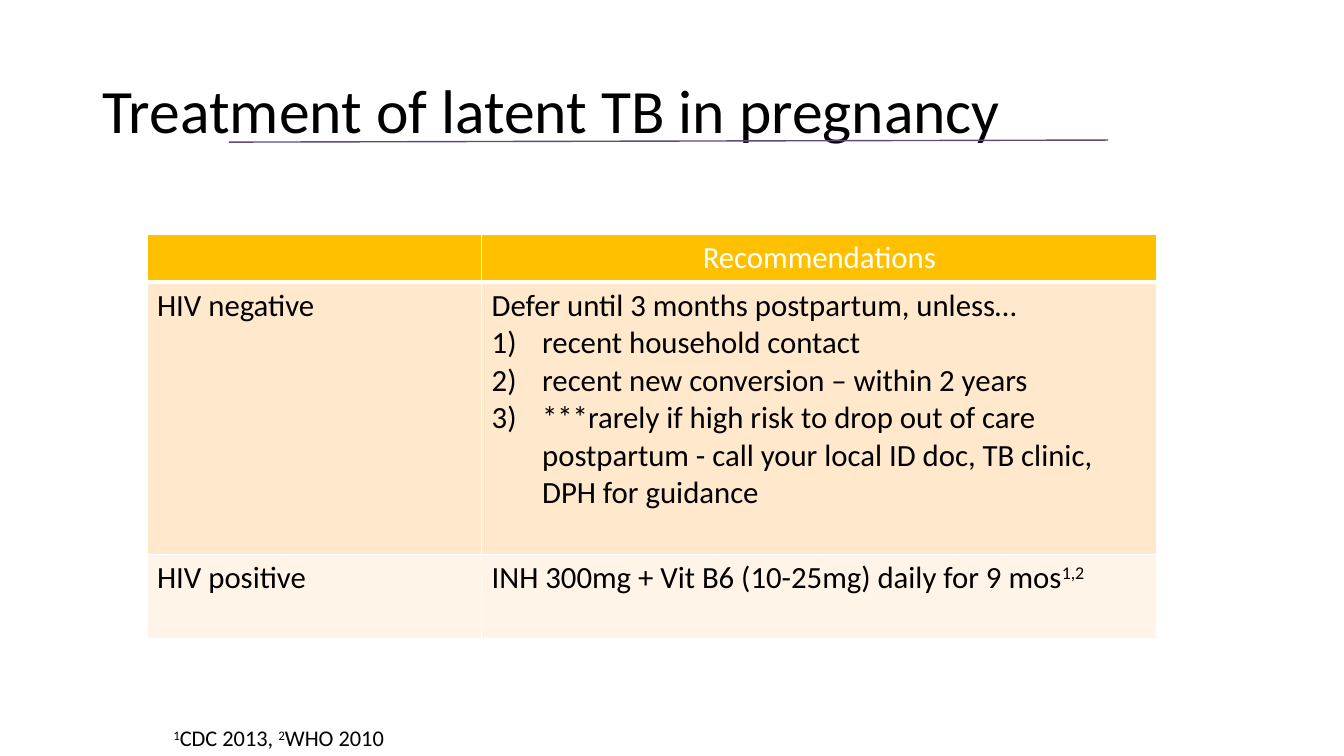
from pptx import Presentation
from pptx.dml.color import RGBColor
from pptx.enum.shapes import MSO_CONNECTOR
from pptx.enum.text import MSO_ANCHOR, MSO_AUTO_SIZE, PP_ALIGN
from pptx.oxml.ns import qn
from pptx.util import Inches, Pt
from lxml import etree

MIDDLE = MSO_ANCHOR.MIDDLE
NO_AUTOFIT = MSO_AUTO_SIZE.NONE
LEFT, CENTER = PP_ALIGN.LEFT, PP_ALIGN.CENTER
STRAIGHT = MSO_CONNECTOR.STRAIGHT
TITLE_ONLY = 5

BLACK, WHITE, PURPLE = "000000", "FFFFFF", "604A7B"
GOLD, PEACH, CREAM = "FFC000", "FFE8CC", "FFF4E7"

COLUMN_SHARES = [24.9, 50.25]
ROW_SHARES = [6.2, 36, 11.2]
ROW_FILLS = [GOLD, PEACH, CREAM]
# Each cell is a list of paragraphs, each paragraph a list of (text, raised) spans.
CELLS = [
    [[], [[("Recommendations", False)]]],
    [[[("HIV negative", False)]],
     [[("Defer until 3 months postpartum, unless…", False)],
      [("recent household contact", False)],
      [("recent new conversion – within 2 years", False)],
      [("***rarely if high risk to drop out of care postpartum - "
        "call your local ID doc, TB clinic, DPH for guidance", False)]]],
    [[[("HIV positive", False)]],
     [[("INH 300mg + Vit B6 (10-25mg) daily for 9 mos", False), ("1,2", True)]]],
]
SOURCES = [(" 1", True), ("CDC 2013, ", False), ("2", True), ("WHO 2010", False)]


def color(hex_code):
    return RGBColor.from_string(hex_code)


def number_paragraph(para):
    properties = para._p.get_or_add_pPr()
    properties.set("marL", str(Inches(0.5)))
    properties.set("indent", str(Inches(-0.5)))
    etree.SubElement(properties, qn("a:buAutoNum"), type="arabicParenR")


def border_cell(cell, bottom_width):
    properties = cell._tc.get_or_add_tcPr()
    for side, width in (("L", 1), ("R", 1), ("T", 1), ("B", bottom_width)):
        edge = etree.SubElement(properties, qn(f"a:ln{side}"), w=str(Pt(width)))
        fill = etree.SubElement(edge, qn("a:solidFill"))
        etree.SubElement(fill, qn("a:srgbClr"), val=WHITE)


class Slide:
    """Places styled elements by percentages of the slide's width and height."""

    font_name = "Calibri"

    def __init__(self, deck):
        self.width, self.height = deck.slide_width, deck.slide_height
        self.page = deck.slides.add_slide(deck.slide_layouts[TITLE_ONLY])

    def across(self, share):
        return round(self.width * share / 100)

    def down(self, share):
        return round(self.height * share / 100)

    def area(self, left, top, width, height):
        return self.across(left), self.down(top), self.across(width), self.down(height)

    def set_text(self, para, spans, size, ink=BLACK, align=LEFT):
        para.alignment = align
        para.font.name, para.font.size = self.font_name, Pt(size)
        para.font.bold = False
        para.font.color.rgb = color(ink)
        for text, raised in spans:
            span = para.add_run()
            span.text = text
            if raised:
                span._r.get_or_add_rPr().set("baseline", "30000")

    def title(self, text, *place):
        box = self.page.shapes.title
        box.left, box.top, box.width, box.height = self.area(*place)
        frame = box.text_frame
        frame.vertical_anchor, frame.auto_size = MIDDLE, NO_AUTOFIT
        para = frame.paragraphs[0]
        para.line_spacing = 0.9
        self.set_text(para, [(text, False)], 44)

    def footnote(self, spans, *place):
        frame = self.page.shapes.add_textbox(*self.area(*place)).text_frame
        frame.word_wrap, frame.vertical_anchor = True, MIDDLE
        frame.margin_left = frame.margin_right = 0
        frame.margin_top = frame.margin_bottom = 0
        self.set_text(frame.paragraphs[0], spans, 16)

    def rule(self, left, top, right, bottom):
        line = self.page.shapes.add_connector(
            STRAIGHT, self.across(left), self.down(top),
            self.across(right), self.down(bottom))
        line.line.color.rgb = color(PURPLE)
        line.line.width = Pt(1)
        etree.SubElement(line._element.spPr, qn("a:effectLst"))

    def table(self, left, top):
        place = self.area(left, top, sum(COLUMN_SHARES), sum(ROW_SHARES))
        table = self.page.shapes.add_table(
            len(ROW_SHARES), len(COLUMN_SHARES), *place).table
        for column, share in zip(table.columns, COLUMN_SHARES):
            column.width = self.across(share)
        for index, row in enumerate(table.rows):
            row.height = self.down(ROW_SHARES[index])
            for cell, paragraphs in zip(row.cells, CELLS[index]):
                self.fill_cell(cell, paragraphs, ROW_FILLS[index], index == 0)

    def fill_cell(self, cell, paragraphs, fill, is_header):
        border_cell(cell, 3 if is_header else 1)
        cell.fill.solid()
        cell.fill.fore_color.rgb = color(fill)
        ink, align = (WHITE, CENTER) if is_header else (BLACK, LEFT)
        frame = cell.text_frame
        for index, spans in enumerate(paragraphs):
            para = frame.add_paragraph() if index else frame.paragraphs[0]
            if index:
                number_paragraph(para)
            self.set_text(para, spans, 22, ink, align)


def main():
    deck = Presentation()
    deck.slide_width, deck.slide_height = Inches(13.33), Inches(7.5)
    slide = Slide(deck)
    slide.title("Treatment of latent TB in pregnancy", 6.9, 5.33, 86.25, 19.33)
    slide.table(10.94, 31)
    slide.footnote(SOURCES, 12.68, 95.33, 66.3, 4.53)
    slide.rule(17.03, 18.8, 82.45, 18.53)
    deck.save("out.pptx")


if __name__ == "__main__":
    main()
